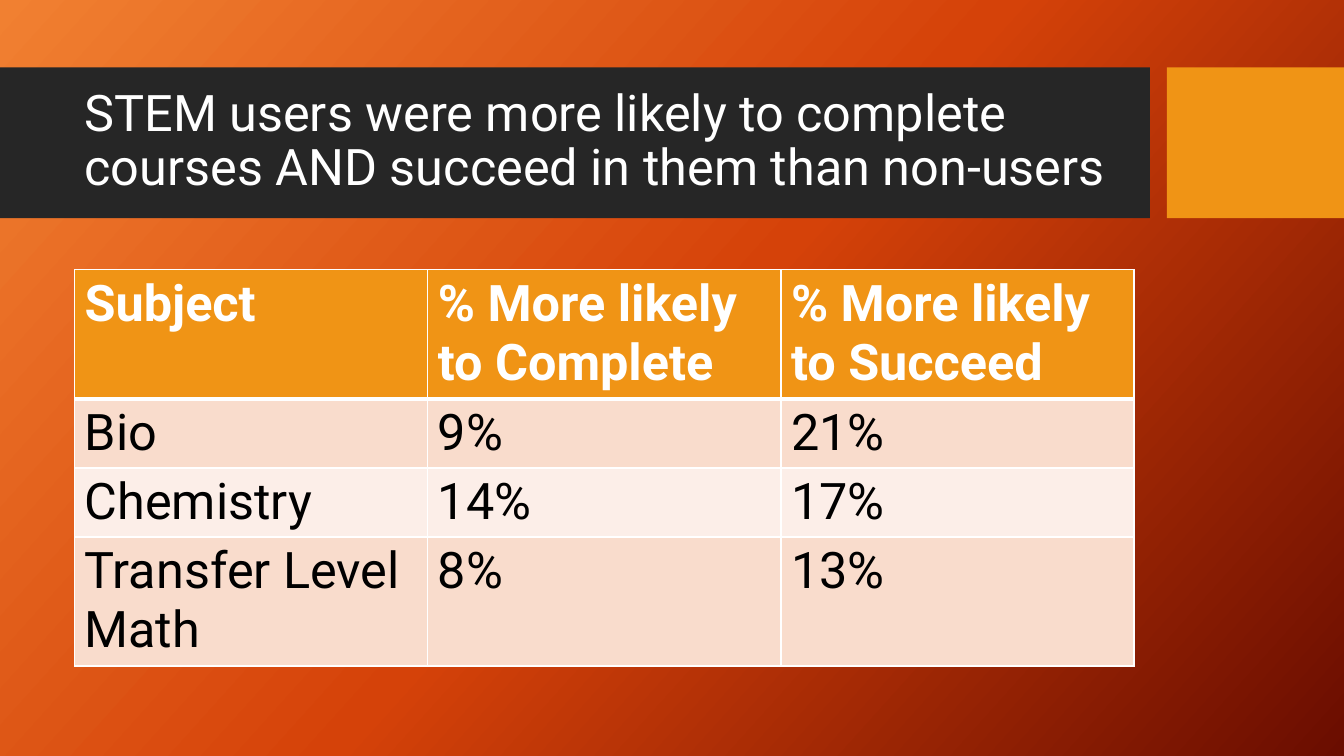
from pptx import Presentation
from pptx import oxml, util as u
from pptx.dml.color import RGBColor
from pptx.enum import shapes, text
from pptx.oxml import ns

WHITE = RGBColor(0xFF, 0xFF, 0xFF)
BLACK = RGBColor(0, 0, 0)
CHARCOAL = RGBColor(0x26, 0x26, 0x26)
ORANGE = RGBColor(0xF0, 0x94, 0x15)
PEACH = RGBColor(0xF9, 0xDC, 0xCC)
PALE_PEACH = RGBColor(0xFC, 0xEE, 0xE8)
GRADIENT = {0: RGBColor(0xF1, 0x80, 0x31), 50: RGBColor(0xD5, 0x42, 0x09),
            100: RGBColor(0x6A, 0x0D, 0x00)}

TITLE = "STEM users were more likely to complete courses AND succeed in them than non-users"
RESULTS = [
    ("Subject", "% More likely to Complete", "% More likely to Succeed"),
    ("Bio", "9%", "21%"),
    ("Chemistry", "14%", "17%"),
    ("Transfer Level Math", "8%", "13%"),
]
ROW_HEIGHTS = [3.25, 1.74, 1.74, 3.25]


class SlideBuilder:
    """Draws styled elements on one slide."""

    def __init__(self, presentation):
        self.slide = presentation.slides.add_slide(presentation.slide_layouts[6])
        self.font = {"name": "Roboto", "size": u.Pt(36), "bold": False}

    def background(self, stops, angle):
        colours = "".join(
            f'<a:gs pos="{position * 1000}"><a:srgbClr val="{colour}"/></a:gs>'
            for position, colour in stops.items())
        self.slide._element.cSld.insert(0, oxml.parse_xml(
            f'<p:bg {ns.nsdecls("p", "a")}><p:bgPr><a:gradFill rotWithShape="1">'
            f'<a:gsLst>{colours}</a:gsLst><a:lin ang="{angle * 60000}" scaled="0"/>'
            '</a:gradFill><a:effectLst/></p:bgPr></p:bg>'))

    def add_text(self, frame, wording, **changes):
        paragraph = frame.paragraphs[0]
        run = paragraph.add_run()
        run.text = wording
        style = {**self.font, **changes}
        run.font.color.rgb = style.pop("colour")
        for name, value in style.items():
            setattr(run.font, name, value)
        return paragraph

    def band(self, left, top, width, height, colour):
        shape = self.slide.shapes.add_shape(
            shapes.MSO_SHAPE.RECTANGLE, *map(u.Cm, (left, top, width, height)))
        shape.shadow.inherit = False
        shape.fill.solid()
        shape.fill.fore_color.rgb = colour
        shape.line.fill.background()

    def title(self, left, top, width, height, wording):
        frame = self.slide.shapes.add_textbox(
            *map(u.Cm, (left, top, width, height))).text_frame
        settings = {"word_wrap": True, "vertical_anchor": text.MSO_ANCHOR.MIDDLE,
                    "auto_size": text.MSO_AUTO_SIZE.NONE}
        for name, value in settings.items():
            setattr(frame, name, value)
        self.add_text(frame, wording, colour=WHITE).line_spacing = 0.9

    def borders(self, cell, top, bottom):
        properties = cell._tc.get_or_add_tcPr()
        for side, points in {"L": 1, "R": 1, "T": top, "B": bottom}.items():
            properties.append(oxml.parse_xml(
                f'<a:ln{side} {ns.nsdecls("a")} w="{u.Pt(points)}"><a:solidFill>'
                f'<a:srgbClr val="{WHITE}"/></a:solidFill></a:ln{side}>'))

    def table(self, left, top, width, row_heights, rows):
        table = self.slide.shapes.add_table(
            len(rows), len(rows[0]),
            *map(u.Cm, (left, top, width, sum(row_heights)))).table
        for index, (height, values) in enumerate(zip(row_heights, rows)):
            header = index == 0
            fill = ORANGE if header else (PALE_PEACH, PEACH)[index % 2]
            table.rows[index].height = u.Cm(height)
            for column, value in enumerate(values):
                cell = table.cell(index, column)
                self.borders(cell, 3 if index == 1 else 1, 3 if header else 1)
                cell.fill.solid()
                cell.fill.fore_color.rgb = fill
                self.add_text(cell.text_frame, value, bold=header,
                              colour=WHITE if header else BLACK)


def main():
    presentation = Presentation()
    presentation.slide_width = u.Cm(33.87)
    presentation.slide_height = u.Cm(19.05)
    builder = SlideBuilder(presentation)
    builder.background(GRADIENT, 42)
    builder.band(0, 1.7, 28.98, 3.8, CHARCOAL)
    builder.band(29.41, 1.7, 4.46, 3.8, ORANGE)
    builder.title(1.88, 2.08, 26.7, 3, TITLE)
    builder.table(1.88, 6.8, 26.7, ROW_HEIGHTS, RESULTS)
    presentation.save("out.pptx")


if __name__ == "__main__":
    main()
